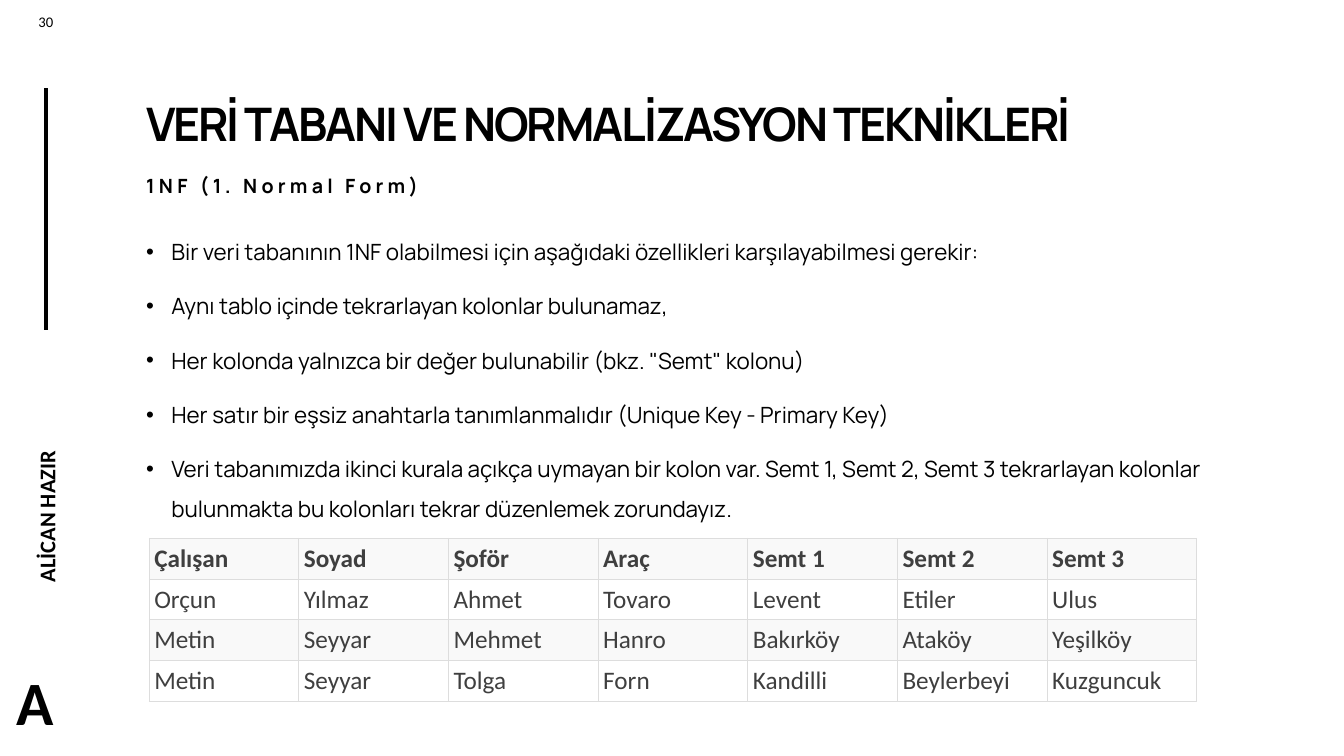
from lxml import etree
from pptx import Presentation
from pptx.dml.color import RGBColor
from pptx.enum.shapes import MSO_CONNECTOR
from pptx.enum.text import MSO_ANCHOR, PP_ALIGN
from pptx.oxml.ns import qn
from pptx.util import Inches, Pt

STRAIGHT = MSO_CONNECTOR.STRAIGHT
TOP, MIDDLE, BOTTOM = MSO_ANCHOR.TOP, MSO_ANCHOR.MIDDLE, MSO_ANCHOR.BOTTOM
LEFT, CENTER = PP_ALIGN.LEFT, PP_ALIGN.CENTER

TITLE = "VERİ TABANI VE NORMALİZASYON TEKNİKLERİ"
SUBTITLE = "1NF (1. Normal Form)"
BULLETS = [
    "Bir veri tabanının 1NF olabilmesi için aşağıdaki özellikleri karşılayabilmesi gerekir:",
    "Aynı tablo içinde tekrarlayan kolonlar bulunamaz,",
    "Her kolonda yalnızca bir değer bulunabilir (bkz. \"Semt\" kolonu)",
    "Her satır bir eşsiz anahtarla tanımlanmalıdır (Unique Key - Primary Key)",
    "Veri tabanımızda ikinci kurala açıkça uymayan bir kolon var. Semt 1, Semt 2, Semt 3 "
    "tekrarlayan kolonlar bulunmakta bu kolonları tekrar düzenlemek zorundayız.",
]
ROWS = [
    ["Çalışan", "Soyad", "Şoför", "Araç", "Semt 1", "Semt 2", "Semt 3"],
    ["Orçun", "Yılmaz", "Ahmet", "Tovaro", "Levent", "Etiler", "Ulus"],
    ["Metin", "Seyyar", "Mehmet", "Hanro", "Bakırköy", "Ataköy", "Yeşilköy"],
    ["Metin", "Seyyar", "Tolga", "Forn", "Kandilli", "Beylerbeyi", "Kuzguncuk"],
]
AUTHOR, MONOGRAM, PAGE = "ALİCAN HAZIR", "A", "30"

THEME = {
    "heading": "Manrope", "plain": "Calibri",
    "ink": "000000", "cell_ink": "3F3F3F", "border": "DDDDDD",
    "bands": ["F9F9F9", "FFFFFF"],
    "title": 33, "subtitle": 14, "body": 16, "cell": 18,
    "author": 16, "page": 10.5, "monogram": 44,
}
TEXT_LEFT = 1.45
TABLE_BOX = (1.48, 5.34, 10.39, 1.62)
HEADING_INSETS = (0, 0.05, 0.1, 0.05)
TIGHT_INSETS = (0.02,) * 4
CELL_INSETS = (0.05,) * 4


def write(tf, text, size, font=THEME["heading"], color=THEME["ink"], bold=False,
          align=LEFT, line=None, before=0, spacing=None, bullet=None):
    tf.word_wrap = True
    lines = [text] if isinstance(text, str) else text
    for i, content in enumerate(lines):
        p = tf.add_paragraph() if i else tf.paragraphs[0]
        p.alignment = align
        p.space_before = Pt(before)
        if line:
            p.line_spacing = line
        if bullet:
            p_pr = p._p.get_or_add_pPr()
            p_pr.set("marL", str(Inches(0.25)))
            p_pr.set("indent", str(Inches(-0.25)))
            etree.SubElement(p_pr, qn("a:buFont"), typeface="Arial")
            etree.SubElement(p_pr, qn("a:buChar"), char=bullet)
        r = p.add_run()
        r.text = content
        r.font.name, r.font.size, r.font.bold = font, Pt(size), bold
        r.font.color.rgb = RGBColor.from_string(color)
        if spacing:
            r._r.get_or_add_rPr().set("spc", str(int(spacing * 100)))


def set_insets(target, insets):
    (target.margin_left, target.margin_top,
     target.margin_right, target.margin_bottom) = map(Inches, insets)


def add_text(s, box, text, size, insets=HEADING_INSETS, anchor=TOP, rotation=0, **fmt):
    sp = s.shapes.add_textbox(*map(Inches, box))
    sp.rotation = rotation
    tf = sp.text_frame
    set_insets(tf, insets)
    tf.vertical_anchor = anchor
    write(tf, text, size, **fmt)


def add_rule(s):
    rule = s.shapes.add_connector(STRAIGHT, *map(Inches, (0.46, 3.27, 0.46, 0.87)))
    rule.line.color.rgb = RGBColor.from_string(THEME["ink"])
    rule.line.width = Pt(3)
    etree.SubElement(rule._element.spPr, qn("a:effectLst"))


def add_borders(cell):
    tc_pr = cell._tc.get_or_add_tcPr()
    for i, side in enumerate(("a:lnL", "a:lnR", "a:lnT", "a:lnB")):
        ln = etree.Element(qn(side), w=str(Pt(0.75)))
        fill = etree.SubElement(ln, qn("a:solidFill"))
        etree.SubElement(fill, qn("a:srgbClr"), val=THEME["border"])
        tc_pr.insert(i, ln)


def add_data_table(s):
    left, top, width, height = map(Inches, TABLE_BOX)
    table = s.shapes.add_table(len(ROWS), len(ROWS[0]), left, top, width, height).table
    for i, row in enumerate(ROWS):
        for j, text in enumerate(row):
            cell = table.cell(i, j)
            set_insets(cell, CELL_INSETS)
            cell.fill.solid()
            cell.fill.fore_color.rgb = RGBColor.from_string(THEME["bands"][i % 2])
            write(cell.text_frame, text, THEME["cell"], font=THEME["plain"],
                  color=THEME["cell_ink"], bold=i == 0)
            add_borders(cell)


def main():
    prs = Presentation()
    prs.slide_width, prs.slide_height = Inches(13.33), Inches(7.5)
    s = prs.slides.add_slide(prs.slide_layouts[6])

    plain = {"font": THEME["plain"]}
    label = {"font": THEME["plain"], "bold": True, "insets": TIGHT_INSETS, "anchor": MIDDLE}
    add_text(s, (-0.42, 4.76, 1.76, 0.31), AUTHOR, THEME["author"], rotation=270, **label)
    add_rule(s)
    add_text(s, (0.17, 0.08, 0.57, 0.27), PAGE, THEME["page"],
             insets=(0.1, 0.05, 0.1, 0.05), align=CENTER, **plain)
    add_text(s, (0.14, 6.56, 0.52, 0.78), MONOGRAM, THEME["monogram"], **label)

    add_text(s, (TEXT_LEFT, 0.92, 10.88, 0.63), TITLE, THEME["title"],
             anchor=BOTTOM, bold=True, line=0.9, spacing=-1.5)
    add_text(s, (TEXT_LEFT, 1.7, 9.31, 0.31), SUBTITLE, THEME["subtitle"],
             bold=True, line=0.9, before=10, spacing=3)
    add_text(s, (TEXT_LEFT, 2.18, 11.28, 2.91), BULLETS, THEME["body"],
             line=1.5, before=10, bullet="•")
    add_data_table(s)
    prs.save("out.pptx")


if __name__ == "__main__":
    main()
